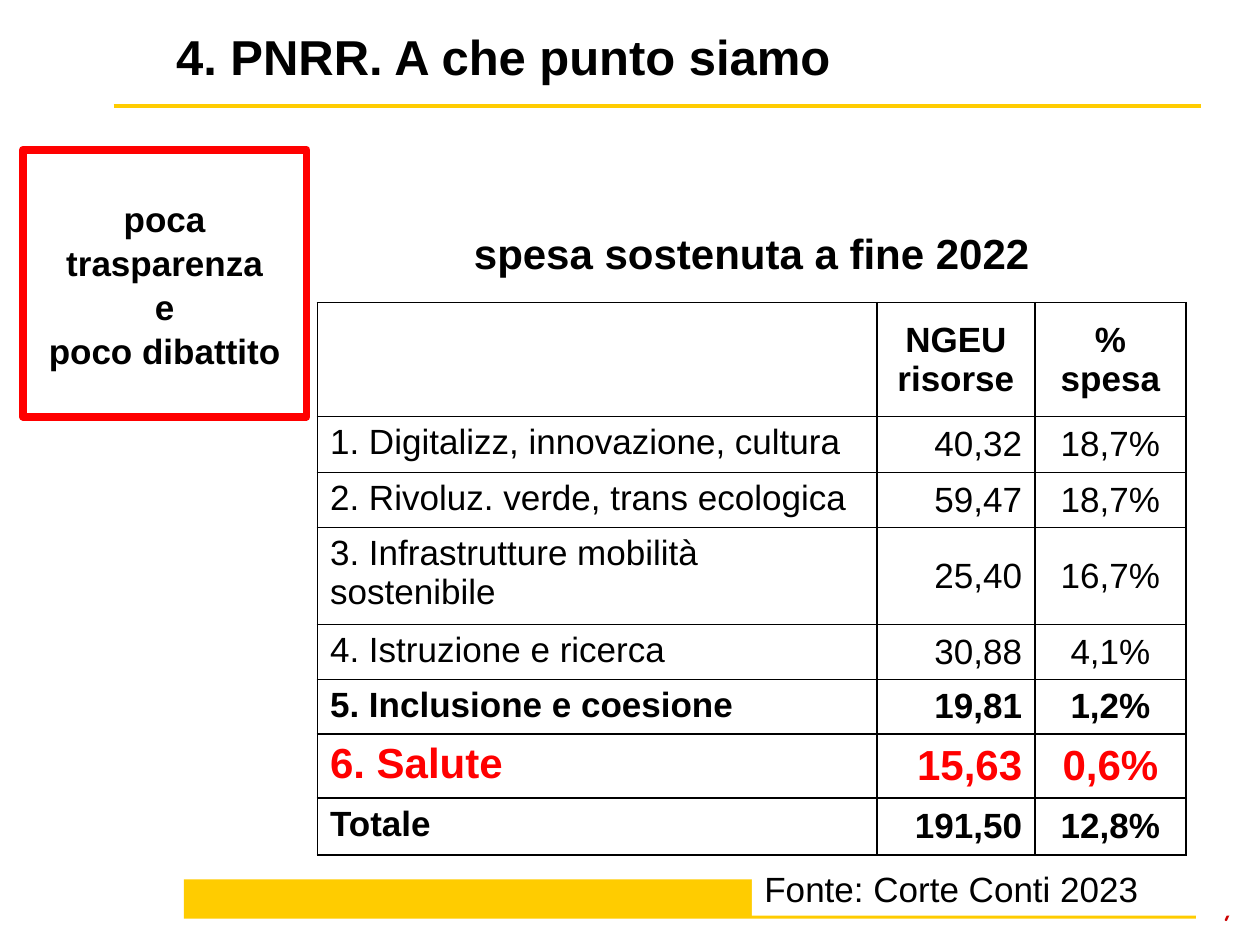
import pptx
import pptx.dml.color
import pptx.enum.shapes
import pptx.enum.text
import pptx.oxml
import pptx.oxml.ns
import pptx.util
from lxml import etree

Cm = pptx.util.Cm
Pt = pptx.util.Pt
ALIGN = pptx.enum.text.PP_ALIGN
ANCHOR = pptx.enum.text.MSO_ANCHOR
RECTANGLE = pptx.enum.shapes.MSO_SHAPE.RECTANGLE

COLORS = {"text": "000000", "paper": "FFFFFF", "gold": "FFCC00", "alert": "FF0000", "number": "CC0000"}
COLUMN_WIDTHS = [11.28, 3.18, 3.05]
COLUMN_ALIGNS = [ALIGN.LEFT, ALIGN.RIGHT, ALIGN.CENTER]
ROW_HEIGHTS = [2.3, 1.13, 1.11, 1.94, 1.11, 1.1, 1.29, 1.15]
BOLD = {"bold": True}
ROWS = [
    (["", "NGEU\nrisorse", "%\nspesa"], BOLD),
    (["1. Digitalizz, innovazione, cultura", "40,32", "18,7%"], {}),
    (["2. Rivoluz. verde, trans ecologica", "59,47", "18,7%"], {}),
    (["3. Infrastrutture mobilità sostenibile", "25,40", "16,7%"], {}),
    (["4. Istruzione e ricerca", "30,88", "4,1%"], {}),
    (["5. Inclusione e coesione", "19,81", "1,2%"], BOLD),
    (["6. Salute", "15,63", "0,6%"], {"bold": True, "size": Pt(24), "color": "alert"}),
    (["Totale", "191,50", "12,8%"], BOLD),
]


def rgb(name):
    return pptx.dml.color.RGBColor.from_string(COLORS[name])


def write(frame, text, align=ALIGN.LEFT, color="text", line_spacing=None, **font_values):
    """Fill a text frame, one paragraph per line of text."""
    frame.word_wrap = True
    values = {"name": "Arial", "size": Pt(20), "bold": False, **font_values}
    frame.text = text
    for paragraph in frame.paragraphs:
        paragraph.alignment = align
        if line_spacing:
            paragraph.line_spacing = line_spacing
        for key, value in values.items():
            setattr(paragraph.font, key, value)
        paragraph.font.color.rgb = rgb(color)


def add_text(slide, box, text, anchor=ANCHOR.MIDDLE, **text_values):
    shape = slide.shapes.add_textbox(*map(Cm, box))
    write(shape.text_frame, text, **text_values)
    shape.text_frame.vertical_anchor = anchor
    return shape


def add_rectangle(slide, box, fill=None, line=None, line_width=0):
    shape = slide.shapes.add_shape(RECTANGLE, *map(Cm, box))
    shape.shadow.inherit = False
    for part, color in ((shape.fill, fill), (shape.line.fill, line)):
        if color:
            part.solid()
            part.fore_color.rgb = rgb(color)
        else:
            part.background()
    if line:
        shape.line.width = Pt(line_width)
    return shape


def add_header(slide, left, top, width):
    rule_top = top + 1.72
    rule = slide.shapes.add_connector(
        pptx.enum.shapes.MSO_CONNECTOR.STRAIGHT,
        Cm(left), Cm(rule_top), Cm(left + width), Cm(rule_top))
    rule.line.color.rgb = rgb("gold")
    rule.line.width = Pt(2.25)
    etree.SubElement(rule._element.spPr, pptx.oxml.ns.qn("a:effectLst"))
    add_text(slide, (left + 1.01, top, width - 1.12, 1.42), "4. PNRR. A che punto siamo",
             size=Pt(28), bold=True)


def add_footer(slide, left, top, width):
    add_rectangle(slide, (left, top, width, 0.79), fill="gold")
    add_text(slide, (left + 20.22, top + 0.3, 1.19, 0.76), "7", anchor=ANCHOR.TOP,
             align=ALIGN.RIGHT, color="number", name="Quicksand", size=Pt(12), bold=True)
    source = add_rectangle(slide, (left + 11.45, top - 0.38, 10.21, 1.11), fill="paper")
    write(source.text_frame, "Fonte: Corte Conti 2023")
    source.text_frame.vertical_anchor = ANCHOR.MIDDLE


def add_callout(slide, box):
    shape = add_rectangle(slide, box, line="alert", line_width=4.5)
    write(shape.text_frame, "poca trasparenza\ne\npoco dibattito", align=ALIGN.CENTER,
          line_spacing=1.05, bold=True)
    shape.text_frame.vertical_anchor = ANCHOR.MIDDLE


def add_borders(cell):
    properties = cell._tc.get_or_add_tcPr()
    for position, side in enumerate(("lnL", "lnR", "lnT", "lnB")):
        properties.insert(position, pptx.oxml.parse_xml(
            f'<a:{side} {pptx.oxml.ns.nsdecls("a")} w="{Pt(1)}"><a:solidFill>'
            f'<a:srgbClr val="{COLORS["text"]}"/></a:solidFill></a:{side}>'))


def add_spending_table(slide, left, top):
    width = sum(COLUMN_WIDTHS)
    title = add_text(slide, (left, top - 2.98, width, 2.87), "spesa sostenuta a fine 2022",
                     anchor=ANCHOR.BOTTOM, align=ALIGN.CENTER, size=Pt(24), bold=True)
    title.text_frame.margin_bottom = Cm(0.38)

    table = slide.shapes.add_table(len(ROWS), len(COLUMN_WIDTHS), Cm(left), Cm(top),
                                   Cm(width), Cm(sum(ROW_HEIGHTS))).table
    table.first_row = table.horz_banding = False
    for column, column_width in zip(table.columns, COLUMN_WIDTHS):
        column.width = Cm(column_width)
    for row_index, (texts, style) in enumerate(ROWS):
        table.rows[row_index].height = Cm(ROW_HEIGHTS[row_index])
        for column_index, text in enumerate(texts):
            cell = table.cell(row_index, column_index)
            align = ALIGN.CENTER if row_index == 0 else COLUMN_ALIGNS[column_index]
            write(cell.text_frame, text, align=align, **style)
            cell.vertical_anchor = ANCHOR.MIDDLE if column_index else ANCHOR.TOP
            cell.fill.background()
            add_borders(cell)


def main():
    presentation = pptx.Presentation()
    presentation.slide_width = Cm(25.4)
    presentation.slide_height = Cm(19.05)
    slide = presentation.slides.add_slide(presentation.slide_layouts[6])
    add_header(slide, 2.29, 0.41, 21.92)
    add_spending_table(slide, 6.4, 6.1)
    add_footer(slide, 3.71, 17.73, 20.4)
    add_callout(slide, (0.46, 3.02, 5.72, 5.38))
    presentation.save("out.pptx")


if __name__ == "__main__":
    main()
